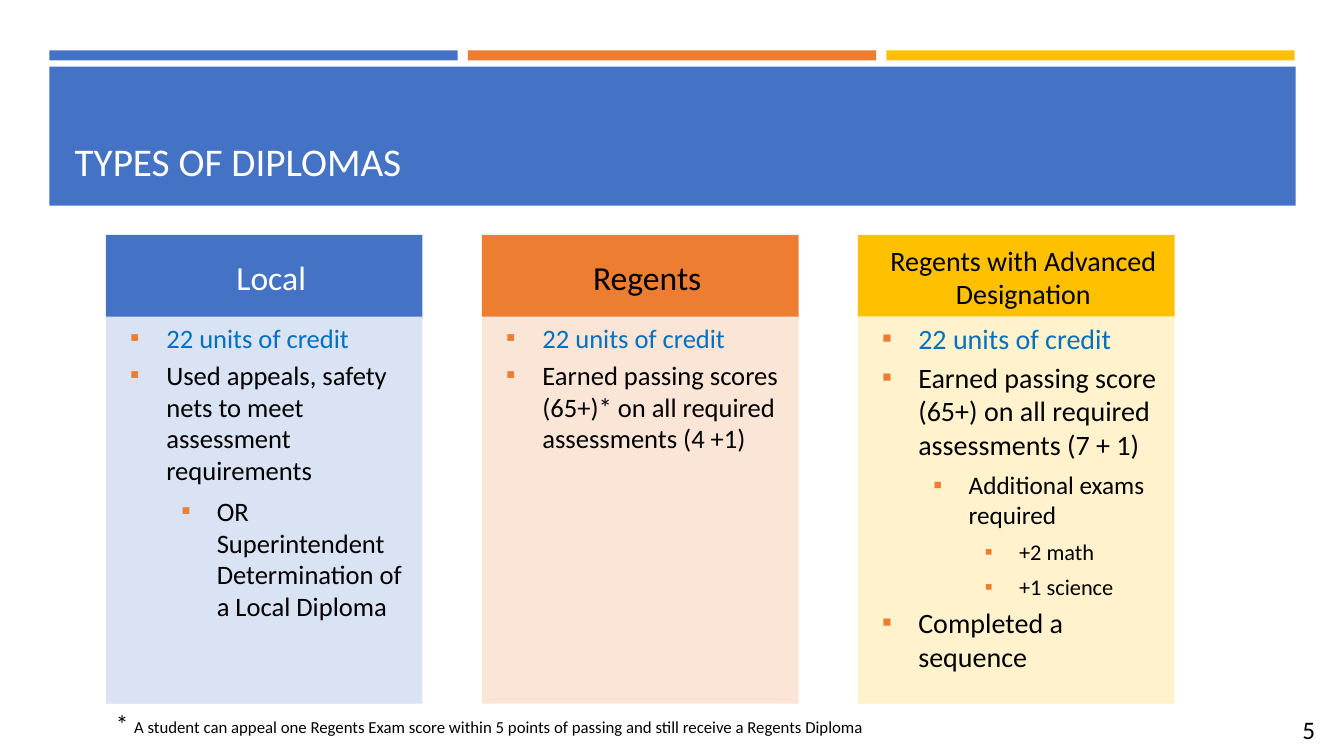
"""Build a slide that compares three types of diplomas."""
from lxml import etree
from pptx import Presentation
from pptx.dml.color import RGBColor
from pptx.enum.shapes import MSO_SHAPE
from pptx.enum.text import MSO_ANCHOR, MSO_AUTO_SIZE, PP_ALIGN
from pptx.oxml.ns import qn
from pptx.util import Inches, Pt

RECTANGLE = MSO_SHAPE.RECTANGLE
TOP, MIDDLE, BOTTOM = MSO_ANCHOR.TOP, MSO_ANCHOR.MIDDLE, MSO_ANCHOR.BOTTOM
LEFT, CENTER = PP_ALIGN.LEFT, PP_ALIGN.CENTER
NO_AUTOSIZE = MSO_AUTO_SIZE.NONE
FONT = "Calibri"
BLUE, ORANGE, GOLD = "4472C4", "ED7D31", "FFC000"
BLACK, WHITE, LINK_BLUE = "000000", "FFFFFF", "0070C0"
MARGIN, STRIPE_STEP, STRIPE_WIDTH = 0.49, 4.15, 4.05
COLUMN_LEFT, COLUMN_STEP, COLUMN_WIDTH = 1.05, 3.73, 3.14
HEADER_TOP, HEADER_HEIGHT, BODY_TOP, BODY_HEIGHT = 2.33, 0.83, 3.14, 3.84
LEVELS = [(0.5, 0.36, 3.6), (1, 0.35, 6), (1.5, 0.34, 6)]

CREDIT = "22 units of credit"
COLUMNS = [
    ("Local", 24, WHITE, BLUE, "DAE3F3", [
        (CREDIT, 0, 19, LINK_BLUE),
        ("Used appeals, safety nets to meet assessment requirements", 0, 19, BLACK),
        ("OR Superintendent Determination of a Local Diploma", 1, 19, BLACK),
    ]),
    ("Regents", 24, BLACK, ORANGE, "FBE5D6", [
        (CREDIT, 0, 19, LINK_BLUE),
        ("Earned passing scores (65+)* on all required assessments (4 +1)", 0, 19, BLACK),
    ]),
    ("Regents with Advanced Designation", 20, BLACK, GOLD, "FFF2CC", [
        (CREDIT, 0, 20, LINK_BLUE),
        ("Earned passing score (65+) on all required assessments (7 + 1)", 0, 20, BLACK),
        ("Additional exams required", 1, 18, BLACK),
        ("+2 math", 2, 16, BLACK),
        ("+1 science", 2, 16, BLACK),
        ("Completed a sequence", 0, 20, BLACK),
    ]),
]


def color(value):
    return RGBColor.from_string(value)


def add_run(paragraph, text, size, font_color):
    run = paragraph.add_run()
    run.text = text
    run.font.name = FONT
    run.font.size = Pt(size)
    run.font.bold = False
    run.font.color.rgb = color(font_color)


presentation = Presentation()
presentation.slide_width = Inches(13.33)
presentation.slide_height = Inches(7.5)
slide = presentation.slides.add_slide(presentation.slide_layouts.get_by_name("Comparison"))
shapes = slide.shapes

bars = [(MARGIN + STRIPE_STEP * index, 0.5, STRIPE_WIDTH, 0.1, fill)
        for index, fill in enumerate([BLUE, ORANGE, GOLD])]
bars.append((MARGIN, 0.66, 12.36, 1.38, BLUE))
for *box, fill in bars:
    bar = shapes.add_shape(RECTANGLE, *map(Inches, box))
    bar.fill.solid()
    bar.fill.fore_color.rgb = color(fill)
    bar.line.fill.background()
    bar.shadow.inherit = False

title = shapes.title
title.left, title.top, title.width, title.height = map(Inches, (0.64, 0.8, 12.06, 1.08))
title.text_frame.vertical_anchor = BOTTOM
title.text_frame.auto_size = NO_AUTOSIZE
title_paragraph = title.text_frame.paragraphs[0]
title_paragraph.alignment = LEFT
add_run(title_paragraph, "TYPES OF DIPLOMAS", 28, WHITE)
title.element.getparent().append(title.element)

placeholders = {shape.placeholder_format.idx: shape for shape in slide.placeholders}
for index, (name, size, name_color, header_fill, body_fill, items) in enumerate(COLUMNS):
    left = COLUMN_LEFT + COLUMN_STEP * index
    parts = [
        (2 * index + 1, HEADER_TOP, HEADER_HEIGHT, header_fill, MIDDLE, [(name, None, size, name_color)]),
        (2 * index + 2, BODY_TOP, BODY_HEIGHT, body_fill, TOP, items),
    ]
    for number, top, height, fill, anchor, lines in parts:
        box = [Inches(length) for length in (left, top, COLUMN_WIDTH, height)]
        panel = placeholders.get(number) or shapes.add_textbox(*box)
        panel.left, panel.top, panel.width, panel.height = box
        panel.fill.solid()
        panel.fill.fore_color.rgb = color(fill)
        frame = panel.text_frame
        frame.word_wrap = True
        frame.auto_size = NO_AUTOSIZE
        frame.vertical_anchor = anchor
        for position, (text, level, text_size, text_color) in enumerate(lines):
            paragraph = frame.add_paragraph() if position else frame.paragraphs[0]
            properties = paragraph._p.get_or_add_pPr()
            if level is None:
                properties.set("marL", str(Inches(0.14)))
                properties.set("indent", "0")
                paragraph.alignment = CENTER
                space = 0
            else:
                indent, hanging, space = LEVELS[level]
                paragraph.level = level
                properties.set("marL", str(Inches(indent)))
                properties.set("indent", str(-Inches(hanging)))
                bullet_color = etree.SubElement(properties, qn("a:buClr"))
                etree.SubElement(bullet_color, qn("a:srgbClr"), val=ORANGE)
                etree.SubElement(properties, qn("a:buFont"), typeface=FONT)
                etree.SubElement(properties, qn("a:buChar"), char="▪")
            paragraph.space_before = Pt(space if position else 0)
            add_run(paragraph, text, text_size, text_color)

footnote = shapes.add_textbox(*map(Inches, (COLUMN_LEFT, 6.98, 7.71, 0.4)))
footnote_paragraph = footnote.text_frame.paragraphs[0]
add_run(footnote_paragraph, "* ", 18, BLACK)
add_run(footnote_paragraph, "A student can appeal one Regents Exam score within 5 points of passing "
        "and still receive a Regents Diploma", 12, BLACK)

page_number = shapes.add_textbox(*map(Inches, (12.63, 7.04, 0.7, 0.4)))
page_number.text_frame.word_wrap = True
page_paragraph = page_number.text_frame.paragraphs[0]
page_paragraph.alignment = CENTER
add_run(page_paragraph, "5", 18, BLACK)

presentation.save("out.pptx")
